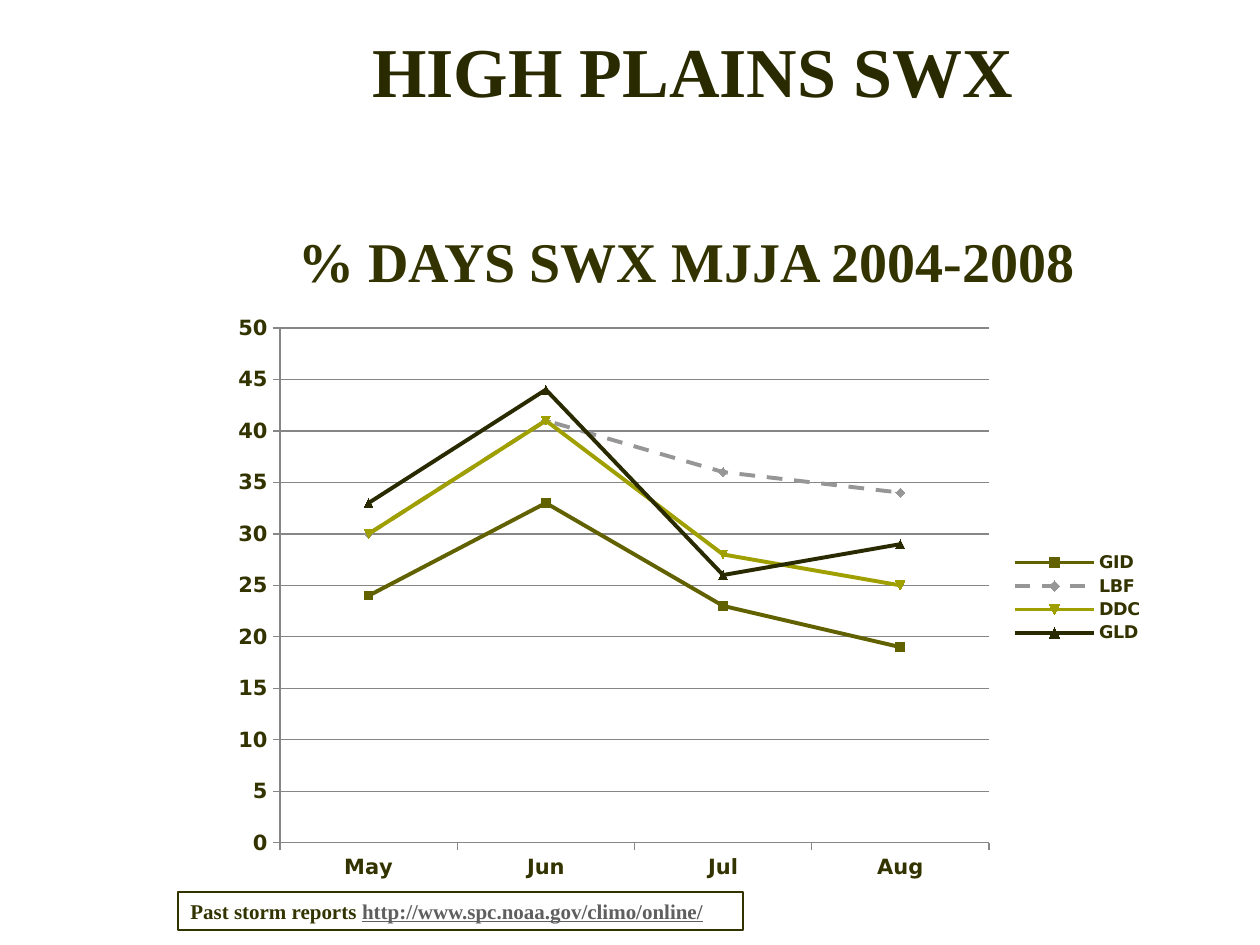
import pptx
import pptx.chart.data
import pptx.dml.color
import pptx.enum.chart
import pptx.enum.dml
import pptx.enum.text
import pptx.oxml
import pptx.util

EMU_PER_PX = 914400 // 126
SERIF, SANS = "Times New Roman", "DejaVu Sans"
INK, GRID, LINK = "333300", "868686", "5F5F5F"
CHART_BOX = (220, 305, 935, 588)
PLOT_BOX = (280, 328, 709, 515)
LEGEND_BOX = (1010, 549, 135, 98)
MONTHS = ["May", "Jun", "Jul", "Aug"]
STATIONS = [
    ("GID", [24, 33, 23, 19], "616100", "616100"),
    ("LBF", [30, 41, 36, 34], "969696", "969696"),
    ("DDC", [30, 41, 28, 25], "9F9F00", "A6A600"),
    ("GLD", [33, 44, 26, 29], "2A2A00", "2A2A00"),
]
DASHED_STATION = "LBF"


def px(length):
    """Turn pixels into EMU."""
    return pptx.util.Emu(length * EMU_PER_PX)


def color(value):
    """Turn a hex string into a colour."""
    return pptx.dml.color.RGBColor.from_string(value)


def set_values(target, values):
    """Set each attribute named in a dict."""
    for name, value in values.items():
        setattr(target, name, value)


def style_font(font, size, family, ink=INK, **extra):
    """Give a font its bold style, size, family and colour."""
    set_values(font, {"size": pptx.util.Pt(size), "name": family, "bold": True, **extra})
    font.color.rgb = color(ink)


def style_line(line, ink, width):
    """Give a line its colour and width in points."""
    line.color.rgb = color(ink)
    line.width = pptx.util.Pt(width)


def add_text(slide, box, runs, size, centered=True, margin_right=13):
    """Add a one-paragraph text box made of (text, format) runs."""
    shape = slide.shapes.add_textbox(*map(px, box))
    set_values(shape.text_frame, {"word_wrap": True, "margin_right": px(margin_right)})
    paragraph = shape.text_frame.paragraphs[0]
    alignment = pptx.enum.text.PP_ALIGN
    paragraph.alignment = alignment.CENTER if centered else alignment.LEFT
    for text, values in runs:
        run = paragraph.add_run()
        run.text = text
        style_font(run.font, size, SERIF, **values)
    return shape


def make_layout(box, inner=False):
    """Make a manual chart layout from a box on the slide."""
    left, top, width, height = CHART_BOX
    fractions = {
        "x": (box[0] - left) / width,
        "y": (box[1] - top) / height,
        "w": box[2] / width,
        "h": box[3] / height,
    }
    target = '<c:layoutTarget val="inner"/>' if inner else ""
    modes = '<c:xMode val="edge"/><c:yMode val="edge"/>'
    sizes = "".join(f'<c:{name} val="{value:.4f}"/>' for name, value in fractions.items())
    namespace = "http://schemas.openxmlformats.org/drawingml/2006/chart"
    return pptx.oxml.parse_xml(
        f'<c:layout xmlns:c="{namespace}"><c:manualLayout>'
        f"{target}{modes}{sizes}</c:manualLayout></c:layout>"
    )


def place_plot(chart):
    """Fix the inner plot area in the chart."""
    plot_area = chart.element.chart.plotArea
    for layout in plot_area.findall(pptx.oxml.ns.qn("c:layout")):
        plot_area.remove(layout)
    plot_area.insert(0, make_layout(PLOT_BOX, inner=True))


def add_legend(chart):
    """Show the legend at the right of the plot."""
    chart.has_legend = True
    legend = chart.legend
    set_values(legend, {
        "position": pptx.enum.chart.XL_LEGEND_POSITION.RIGHT,
        "include_in_layout": False,
    })
    style_font(legend.font, 10, SANS)
    element = legend._element
    for layout in element.findall(pptx.oxml.ns.qn("c:layout")):
        element.remove(layout)
    position = element.find(pptx.oxml.ns.qn("c:legendPos"))
    position.addnext(make_layout(LEGEND_BOX))


def style_axes(chart):
    """Style both axes and the value gridlines."""
    for axis in (chart.category_axis, chart.value_axis):
        axis.major_tick_mark = pptx.enum.chart.XL_TICK_MARK.OUTSIDE
        style_font(axis.tick_labels.font, 12, SANS)
        style_line(axis.format.line, GRID, 0.75)
    value_axis = chart.value_axis
    set_values(value_axis, {
        "minimum_scale": 0, "maximum_scale": 50, "major_unit": 5,
        "has_major_gridlines": True,
    })
    set_values(value_axis.tick_labels, {"number_format": "0", "number_format_is_linked": False})
    style_line(value_axis.major_gridlines.format.line, GRID, 0.75)


def style_series(series, line_ink, marker_ink):
    """Style one station's line and markers."""
    series.smooth = False
    style_line(series.format.line, line_ink, 2.25)
    if series.name == DASHED_STATION:
        series.format.line.dash_style = pptx.enum.dml.MSO_LINE.DASH
    marker = series.marker
    set_values(marker, {"style": pptx.enum.chart.XL_MARKER_STYLE.AUTOMATIC, "size": 5})
    marker.format.fill.solid()
    marker.format.fill.fore_color.rgb = color(marker_ink)
    style_line(marker.format.line, marker_ink, 0.75)


def add_storm_chart(slide):
    """Add the line chart of storm days by month and station."""
    data = pptx.chart.data.CategoryChartData(number_format="0")
    data.categories = MONTHS
    for name, values, *_ in STATIONS:
        data.add_series(name, values)
    kind = pptx.enum.chart.XL_CHART_TYPE.LINE_MARKERS
    chart = slide.shapes.add_chart(kind, *map(px, CHART_BOX), data).chart
    chart.has_title = False
    style_font(chart.font, 10, SANS)
    plot = chart.plots[0]
    plot.vary_by_categories = False
    for series, (_, _, line_ink, marker_ink) in zip(plot.series, STATIONS):
        style_series(series, line_ink, marker_ink)
    style_axes(chart)
    add_legend(chart)
    place_plot(chart)


def main():
    """Build the slide and save it."""
    presentation = pptx.Presentation()
    set_values(presentation, {"slide_width": px(1260), "slide_height": px(945)})
    slide = presentation.slides.add_slide(presentation.slide_layouts[6])
    source_runs = [
        ("Past storm reports ", {}),
        ("http://www.spc.noaa.gov/climo/online/", {"ink": LINK, "underline": True}),
    ]
    source = add_text(slide, (178, 892, 565, 38), source_runs, 12, centered=False)
    style_line(source.line, INK, 0.75)
    add_storm_chart(slide)
    add_text(slide, (168, 220, 1050, 81), [("% DAYS SWX MJJA 2004-2008", {})], 32, margin_right=25)
    add_text(slide, (168, 21, 1050, 97), [("HIGH PLAINS SWX", {"ink": "2A2A00"})], 40)
    presentation.save("out.pptx")


if __name__ == "__main__":
    main()
